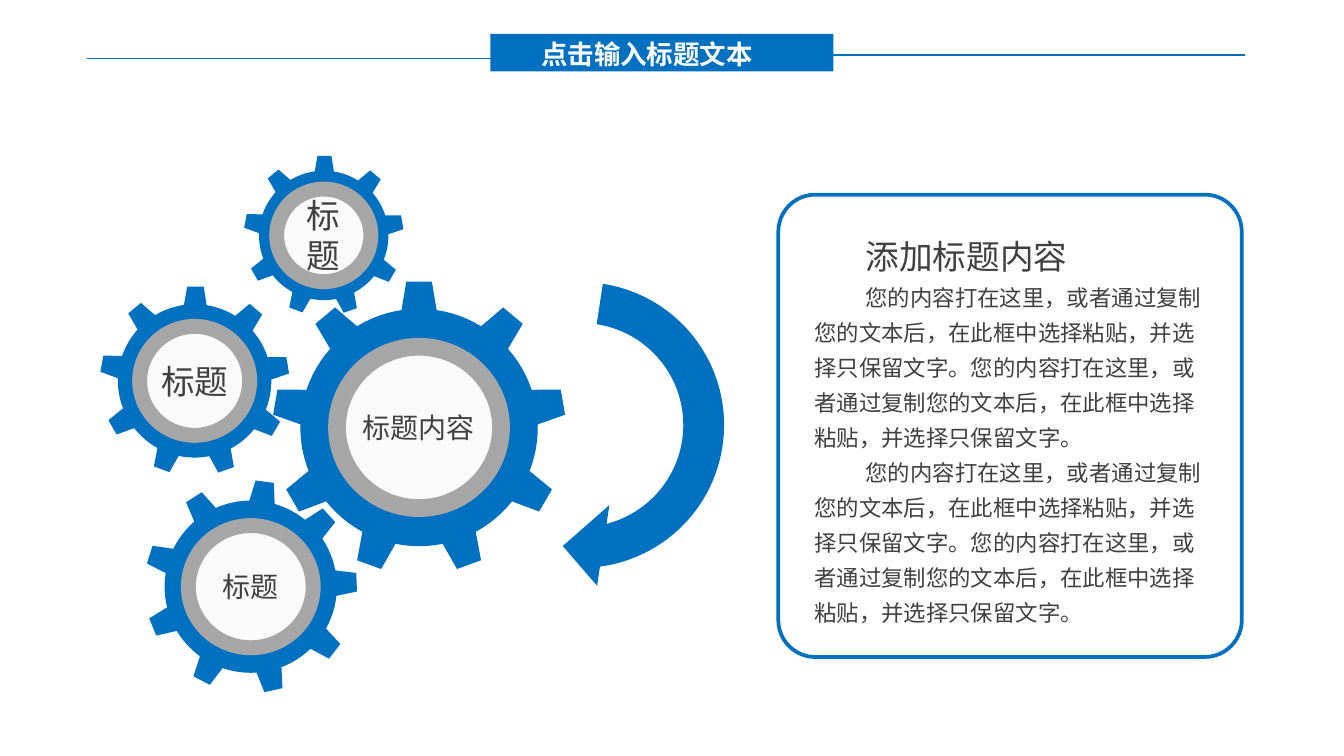
import math
import lxml.etree
import pptx
import pptx.dml.color
import pptx.enum.shapes
import pptx.enum.text
import pptx.oxml.ns
import pptx.util

Cm, Pt = pptx.util.Cm, pptx.util.Pt
Color = pptx.dml.color.RGBColor.from_string
Shape = pptx.enum.shapes.MSO_SHAPE
Align = pptx.enum.text.PP_ALIGN
Anchor = pptx.enum.text.MSO_ANCHOR
qn = pptx.oxml.ns.qn

theme = {
    "font": "Noto Sans CJK SC",
    "blue": Color("0070C0"),
    "rule": Color("006EBC"),
    "ring": Color("A6A6A6"),
    "disc": Color("FAFAFA"),
    "text": Color("404040"),
    "white": Color("FFFFFF"),
    "banner_size": Pt(14.2),
    "heading_size": Pt(18),
    "label_size": Pt(15),
    "body_size": Pt(12),
}


def paint(shape, fill=None, line=None, width=0):
    shape.shadow.inherit = False
    for part, color in ((shape.fill, fill), (shape.line.fill, line)):
        if color is None:
            part.background()
        else:
            part.solid()
            part.fore_color.rgb = color
    if line is not None:
        shape.line.width = Pt(width)


def write(paragraph, text, color, paragraph_format, font_format):
    run = paragraph.add_run()
    run.text = text
    run.font.color.rgb = color
    for target, values in (
        (paragraph, paragraph_format),
        (run.font, {"name": theme["font"], **font_format}),
    ):
        for name, value in values.items():
            setattr(target, name, value)
    properties = run._r.get_or_add_rPr()
    lxml.etree.SubElement(properties, qn("a:ea"), typeface=theme["font"])


presentation = pptx.Presentation()
presentation.slide_width = Cm(25.4)
presentation.slide_height = Cm(14.29)
slide = presentation.slides.add_slide(presentation.slide_layouts[6])
shapes = slide.shapes

no_margins = {f"margin_{side}": 0 for side in ("left", "top", "right", "bottom")}
teeth = 9
step = 360 / teeth
root_ratio = 0.81
tip_angle, root_angle, valley_parts = 5, 8.5, 6
valley = step - 2 * root_angle
tooth_outline = [(-tip_angle, 1), (tip_angle, 1)] + [
    (root_angle + valley * part / valley_parts, root_ratio)
    for part in range(valley_parts + 1)
]

gears = [
    (7.92, 8.08, 2.77, 0, 3.1, 3.05, 9.5, "标题内容", theme["label_size"]),
    (4.74, 11.09, 2.01, 7.6, 2.36, 2.31, 8, "标题", theme["label_size"]),
    (3.68, 7.2, 1.79, 0.5, 2.08, 2.06, 8, "标题", theme["heading_size"]),
    (6.12, 4.45, 1.51, 0.5, 1.78, 1.75, 8, "标题", theme["heading_size"]),
]
for x, y, radius, turn, width, height, ring_width, label, size in gears:
    points = []
    for tooth in range(teeth):
        for angle, ratio in tooth_outline:
            direction = math.radians(turn + tooth * step + angle)
            reach = radius * ratio
            points.append((Cm(x + reach * math.sin(direction)), Cm(y - reach * math.cos(direction))))
    builder = shapes.build_freeform(*points[0], scale=1.0)
    builder.add_line_segments(points[1:], close=True)
    paint(builder.convert_to_shape(), theme["blue"])

    disc = shapes.add_shape(
        Shape.OVAL, Cm(x - width / 2), Cm(y - height / 2), Cm(width), Cm(height)
    )
    paint(disc, theme["disc"], theme["ring"], ring_width)
    frame = disc.text_frame
    for name, value in {**no_margins, "word_wrap": True, "vertical_anchor": Anchor.MIDDLE}.items():
        setattr(frame, name, value)
    label_format = {"alignment": Align.CENTER, "line_spacing": Pt(round(size.pt * 1.19, 1))}
    write(frame.paragraphs[0], label, theme["text"], label_format, {"size": size})

arrow = shapes.add_shape(Shape.CIRCULAR_ARROW, Cm(7.9), Cm(4.95), Cm(6.17), Cm(6.17))
arrow.rotation = 98.7
paint(arrow, theme["blue"])

panel = shapes.add_shape(Shape.ROUNDED_RECTANGLE, Cm(14.71), Cm(3.68), Cm(8.76), Cm(8.74))
panel.adjustments[0] = 0.08
paint(panel, line=theme["blue"], width=2)

content = shapes.add_textbox(Cm(15.14), Cm(3.51), Cm(7.92), Cm(9.12)).text_frame
content.word_wrap = True
sentence = "您的内容打在这里，或者通过复制您的文本后，在此框中选择粘贴，并选择只保留文字。"
content_rows = [("添加标题内容", theme["heading_size"], 45)]
content_rows += [(sentence * 2, theme["body_size"], 18.75)] * 2
for index, (text, size, spacing) in enumerate(content_rows):
    paragraph = content.add_paragraph() if index else content.paragraphs[0]
    write(paragraph, text, theme["text"], {"line_spacing": Pt(spacing)}, {"size": size})
    paragraph._p.get_or_add_pPr().set("indent", str(Cm(0.97)))

banner = shapes.add_shape(Shape.RECTANGLE, Cm(9.27), Cm(0.64), Cm(6.48), Cm(0.71))
paint(banner, theme["blue"])
title = shapes.add_textbox(Cm(9.98), Cm(0.58), Cm(4.72), Cm(0.86)).text_frame
title.word_wrap = True
title.vertical_anchor = Anchor.MIDDLE
write(
    title.paragraphs[0], "点击输入标题文本", theme["white"], {},
    {"size": theme["banner_size"], "bold": True},
)

for left, right, y in ((1.65, 9.47, 1.11), (15.7, 23.52, 1.04)):
    rule = shapes.add_connector(
        pptx.enum.shapes.MSO_CONNECTOR.STRAIGHT, Cm(left), Cm(y), Cm(right), Cm(y)
    )
    rule.line.color.rgb = theme["rule"]
    rule.line.width = Pt(0.75)
    lxml.etree.SubElement(rule._element.spPr, qn("a:effectLst"))

presentation.save("out.pptx")
